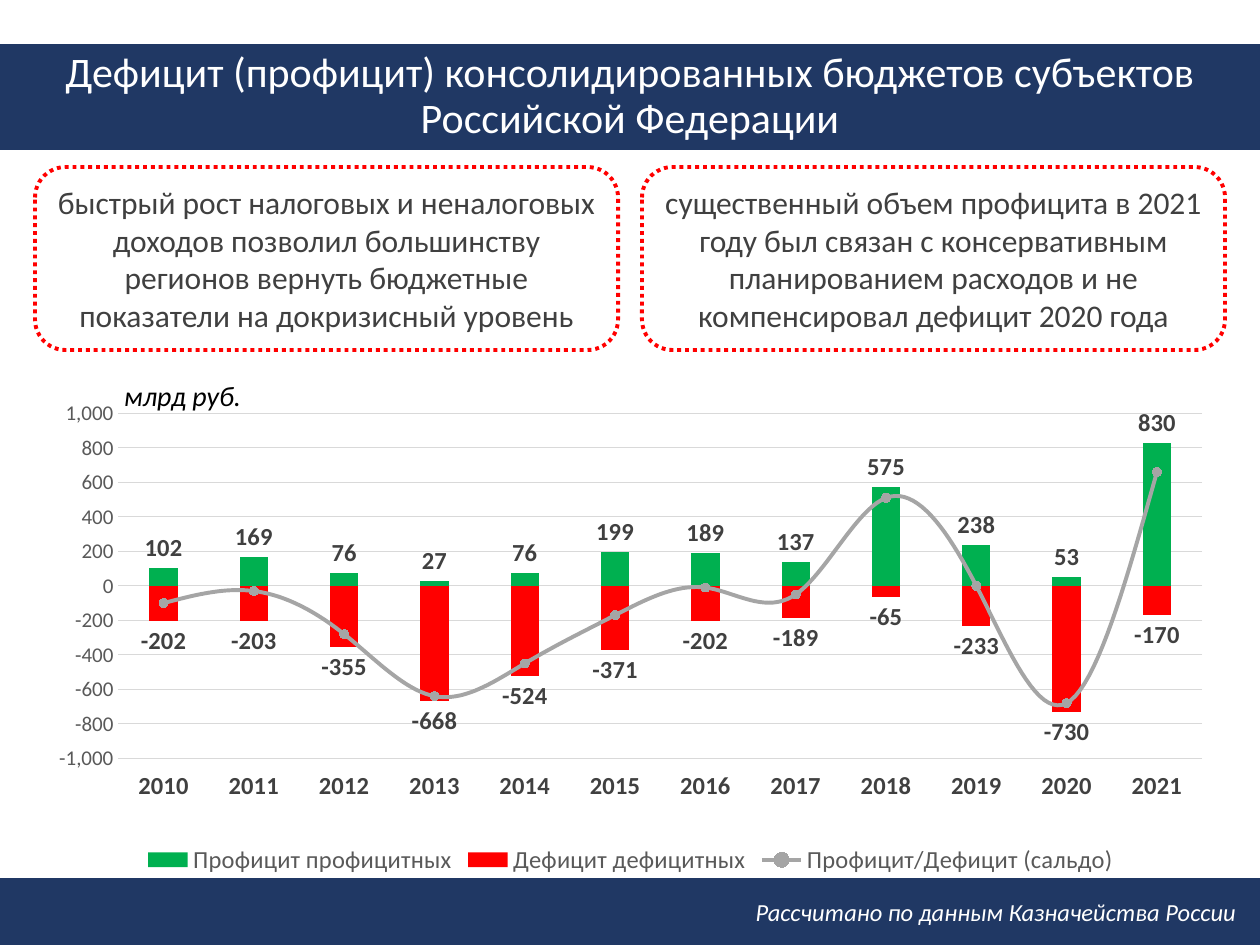
"""Build a slide on surpluses and deficits of regional budgets."""
from copy import deepcopy

from lxml import etree
from pptx import Presentation
from pptx import util as u
from pptx.chart.data import CategoryChartData
from pptx.dml.color import RGBColor
from pptx.enum import chart as charts, dml, shapes, text
from pptx.oxml import parse_xml
from pptx.oxml.ns import nsdecls, qn

COLOURS = {
    "navy": "203864", "white": "FFFFFF", "black": "000000", "dark": "404040",
    "grey": "595959", "grid": "D9D9D9", "green": "00B050", "red": "FF0000",
    "balance": "A5A5A5",
}
YEARS = [str(year) for year in range(2010, 2022)]
SURPLUS = [102, 169, 76, 27, 76, 199, 189, 137, 575, 238, 53, 830]
DEFICIT = [-202, -203, -355, -668, -524, -371, -202, -189, -65, -233, -730, -170]
BALANCE = [-100, -30, -280, -640, -450, -170, -10, -50, 510, 0, -680, 660]
MESSAGES = [
    "быстрый рост налоговых и неналоговых доходов позволил большинству "
    "регионов вернуть бюджетные показатели на докризисный уровень",
    "существенный объем профицита в 2021 году был связан с консервативным "
    "планированием расходов и не компенсировал дефицит 2020 года",
]


def colour(name):
    return RGBColor.from_string(COLOURS[name])


def set_font(font, size, shade, bold=False, italic=False):
    font.name = "Calibri"
    font.size = u.Pt(size)
    font.color.rgb = colour(shade)
    font.bold = bold
    font.italic = italic


def write(frame, words, size=18, shade="dark", align="CENTER", anchor="MIDDLE",
          italic=False, spacing=None):
    frame.word_wrap = True
    frame.vertical_anchor = getattr(text.MSO_ANCHOR, anchor)
    para = frame.paragraphs[0]
    para.alignment = getattr(text.PP_ALIGN, align)
    para.line_spacing = spacing
    span = para.add_run()
    span.text = words
    set_font(span.font, size, shade, italic=italic)


class Slide:
    """Hold the style and the current page."""

    def __init__(self, deck, scale):
        self.scale = scale
        self.page = deck.slides.add_slide(deck.slide_layouts[5])

    def place(self, *lengths):
        return [round(length * self.scale) for length in lengths]

    def title(self, words, *area):
        box = self.page.shapes.title
        box.left, box.top, box.width, box.height = self.place(*area)
        box.fill.solid()
        box.fill.fore_color.rgb = colour("navy")
        box.text_frame.auto_size = text.MSO_AUTO_SIZE.NONE
        write(box.text_frame, words, 24, "white", spacing=0.9)

    def shape(self, kind, *area, fill=None, line="navy", weight=1, dash=None):
        box = self.page.shapes.add_shape(kind, *self.place(*area))
        box.shadow.inherit = False
        if fill:
            box.fill.solid()
            box.fill.fore_color.rgb = colour(fill)
        else:
            box.fill.background()
        box.line.color.rgb = colour(line)
        box.line.width = u.Pt(weight)
        box.line.dash_style = dash
        return box

    def label(self, words, *area, **style):
        box = self.page.shapes.add_textbox(*self.place(*area))
        write(box.text_frame, words, anchor="TOP", italic=True, **style)

    def chart(self, *area):
        data = CategoryChartData(number_format="#,##0")
        data.categories = YEARS
        data.add_series("Профицит профицитных", SURPLUS)
        data.add_series("Дефицит дефицитных", DEFICIT)
        data.add_series("Профицит/Дефицит (сальдо)", BALANCE)
        frame = self.page.shapes.add_chart(
            charts.XL_CHART_TYPE.COLUMN_CLUSTERED, *self.place(*area), data)
        chart = frame.chart
        set_font(chart.font, 10, "black")
        chart.has_title = False
        chart.has_legend = True
        chart.legend.position = charts.XL_LEGEND_POSITION.BOTTOM
        chart.legend.include_in_layout = False
        set_font(chart.legend.font, 14, "grey")
        self.axes(chart)
        self.split_line(chart)
        self.columns(chart.plots[0])
        self.balance(chart.plots[1].series[0])

    def axes(self, chart):
        years, values = chart.category_axis, chart.value_axis
        for axis in (years, values):
            axis.major_tick_mark = axis.minor_tick_mark = charts.XL_TICK_MARK.NONE
        years.tick_label_position = charts.XL_TICK_LABEL_POSITION.LOW
        years.has_major_gridlines = False
        set_font(years.tick_labels.font, 14, "dark", bold=True)
        values.minimum_scale, values.maximum_scale = -1000, 1000
        values.major_unit = 200
        values.tick_labels.number_format = "#,##0"
        values.tick_labels.number_format_is_linked = False
        set_font(values.tick_labels.font, 12, "grey")
        values.format.line.fill.background()
        for line in (years.format.line, values.major_gridlines.format.line):
            line.color.rgb = colour("grid")
            line.width = u.Pt(0.75)

    def split_line(self, chart):
        area = chart.plots[0]._element.getparent()
        bars = area.find(qn("c:barChart"))
        line = parse_xml(
            f'<c:lineChart {nsdecls("c")}><c:grouping val="standard"/>'
            '<c:varyColors val="0"/><c:marker val="1"/></c:lineChart>')
        series = bars.findall(qn("c:ser"))[-1]
        for flag in series.findall(qn("c:invertIfNegative")):
            series.remove(flag)
        line.insert(2, series)
        line.extend([deepcopy(axis) for axis in bars.findall(qn("c:axId"))])
        bars.addnext(line)
        for old in area.findall(qn("c:layout")):
            area.remove(old)
        layout = parse_xml(f'<c:layout {nsdecls("c")}/>')
        manual = etree.SubElement(layout, qn("c:manualLayout"))
        settings = {"layoutTarget": "inner", "xMode": "edge", "yMode": "edge",
                    "x": "0.07", "y": "0.04", "w": "0.91", "h": "0.71"}
        for name, value in settings.items():
            etree.SubElement(manual, qn(f"c:{name}")).set("val", value)
        area.insert(0, layout)

    def columns(self, plot):
        plot.gap_width, plot.overlap = 219, 100
        plot.vary_by_categories = False
        for series, shade in zip(plot.series, ("green", "red")):
            series.invert_if_negative = False
            series.format.fill.solid()
            series.format.fill.fore_color.rgb = colour(shade)
            labels = series.data_labels
            labels.show_value = True
            labels.number_format = "#,##0"
            labels.number_format_is_linked = False
            labels.position = charts.XL_LABEL_POSITION.OUTSIDE_END
            set_font(labels.font, 14, "dark", bold=True)

    def balance(self, series):
        series.smooth = True
        series.format.line.color.rgb = colour("balance")
        series.format.line.width = u.Pt(2.25)
        marker = series.marker
        marker.style, marker.size = charts.XL_MARKER_STYLE.CIRCLE, 5
        marker.format.fill.solid()
        marker.format.fill.fore_color.rgb = colour("balance")
        marker.format.line.color.rgb = colour("balance")


def main():
    deck = Presentation()
    deck.slide_width, deck.slide_height = u.Inches(10), u.Inches(7.5)
    slide = Slide(deck, u.Inches(1) / 126)
    slide.title("Дефицит (профицит) консолидированных бюджетов субъектов "
                "Российской Федерации", 0, 44, 1260, 106)
    slide.shape(shapes.MSO_SHAPE.RECTANGLE, 0, 879, 1260, 66, fill="navy")
    slide.chart(35, 394, 1191, 486)
    slide.label("млрд руб.", 103, 372, 159, 47, size=16, shade="black")
    slide.label("Рассчитано по данным Казначейства России", 670, 891, 579, 43,
                size=14, shade="white", align="RIGHT")
    for column, message in enumerate(MESSAGES):
        box = slide.shape(
            shapes.MSO_SHAPE.ROUNDED_RECTANGLE, 35 + 607 * column, 167, 583, 183,
            line="red", weight=2.25, dash=dml.MSO_LINE.ROUND_DOT)
        write(box.text_frame, message)
    deck.save("out.pptx")


if __name__ == "__main__":
    main()
